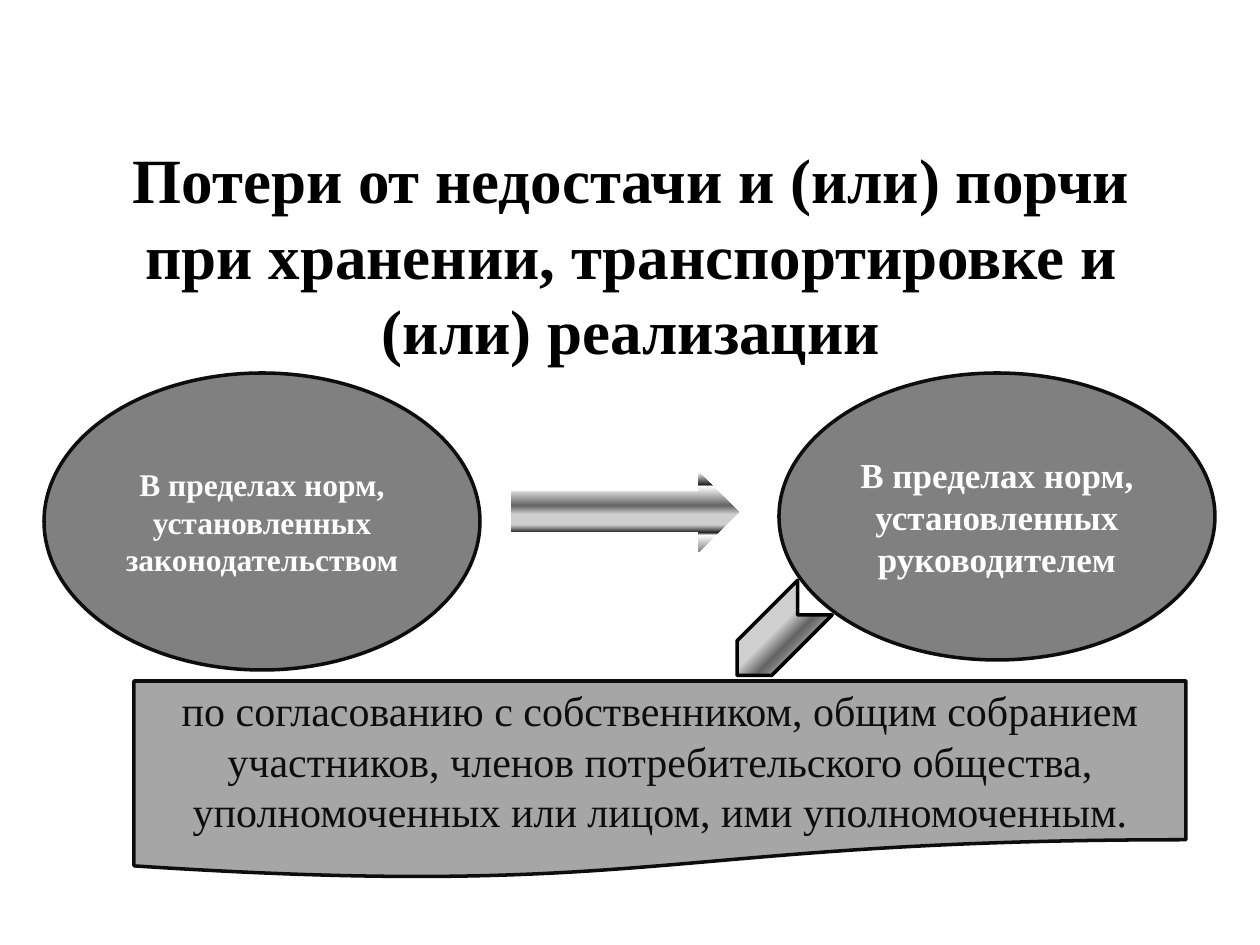
from lxml.etree import SubElement
from pptx import Presentation
from pptx.dml.color import RGBColor
from pptx.enum.shapes import MSO_SHAPE
from pptx.enum.text import MSO_ANCHOR, PP_ALIGN
from pptx.oxml.ns import qn
from pptx.util import Pt

PX = 914400 // 126
HUES = {"black": "000000", "ink": "0D0D0D", "white": "FFFFFF",
        "oval": "808080", "note": "A6A6A6"}
STOPS = [(0, "FFFFFF"), (16, "1F1F1F"), (18, "FFFFFF"), (42, "636363"),
         (53, "CFCFCF"), (66, "CFCFCF"), (76, "1F1F1F"), (79, "FFFFFF"),
         (100, "7F7F7F")]
TITLE = {
    "text": "Потери от недостачи и (или) порчи при хранении, транспортировке и (или) реализации",
    "at": (64, 125, 1134, 258), "size": 36, "bold": True, "ink": "black"}
BOXES = [
    {"kind": MSO_SHAPE.OVAL, "at": (44, 373, 436, 297), "fill": "oval", "line": "ink",
     "text": "В пределах норм, установленных законодательством",
     "size": 18, "bold": True, "ink": "white"},
    {"kind": MSO_SHAPE.OVAL, "at": (779, 373, 436, 287), "fill": "oval", "line": "ink",
     "text": "В пределах норм, установленных руководителем",
     "size": 20, "bold": True, "ink": "white"},
    {"kind": MSO_SHAPE.RIGHT_ARROW, "at": (511, 472, 228, 80)},
    {"kind": MSO_SHAPE.FLOWCHART_DOCUMENT, "at": (134, 681, 1052, 198),
     "fill": "note", "line": "ink",
     "text": "по согласованию с собственником, общим собранием участников, "
             "членов потребительского общества, уполномоченных или лицом, "
             "ими уполномоченным.",
     "size": 24, "bold": False, "ink": "ink"},
    {"kind": MSO_SHAPE.CHEVRON, "at": (721, 612, 110, 49), "turn": 135, "line": "black"},
]


def hue(name):
    return RGBColor.from_string(HUES[name])


def place(shape, at):
    for key, val in zip(("left", "top", "width", "height"), at):
        setattr(shape, key, val * PX)


def write(shape, item):
    frame = shape.text_frame
    frame.text = item["text"]
    frame.word_wrap = True
    frame.vertical_anchor = MSO_ANCHOR.MIDDLE
    para = frame.paragraphs[0]
    para.alignment = PP_ALIGN.CENTER
    font = para.runs[0].font
    look = {"name": "Times New Roman", "size": Pt(item["size"]), "bold": item["bold"]}
    for key, val in look.items():
        setattr(font, key, val)
    font.color.rgb = hue(item["ink"])


def shade(shape):
    shape.fill.gradient()
    grad = shape.element.spPr.find(qn("a:gradFill"))
    for child in list(grad):
        grad.remove(child)
    grad.set("rotWithShape", "1")
    stops = SubElement(grad, qn("a:gsLst"))
    for pos, tone in STOPS:
        stop = SubElement(stops, qn("a:gs"), pos=str(pos * 1000))
        SubElement(stop, qn("a:srgbClr"), val=tone)
    SubElement(grad, qn("a:lin"), ang="5400000", scaled="0")


def draw(slide, item):
    shape = slide.shapes.add_shape(item["kind"], 0, 0, PX, PX)
    place(shape, item["at"])
    shape.shadow.inherit = False
    shape.rotation = item.get("turn", 0)
    if "fill" in item:
        shape.fill.solid()
        shape.fill.fore_color.rgb = hue(item["fill"])
    else:
        shade(shape)
    if "line" in item:
        shape.line.color.rgb = hue(item["line"])
        shape.line.width = Pt(2)
    else:
        shape.line.fill.background()
    if "text" in item:
        write(shape, item)


def main():
    deck = Presentation()
    deck.slide_width, deck.slide_height = 1260 * PX, 945 * PX
    slide = deck.slides.add_slide(deck.slide_layouts[5])
    title = slide.shapes.title
    place(title, TITLE["at"])
    write(title, TITLE)
    for item in BOXES:
        draw(slide, item)
    deck.save("out.pptx")


if __name__ == "__main__":
    main()
